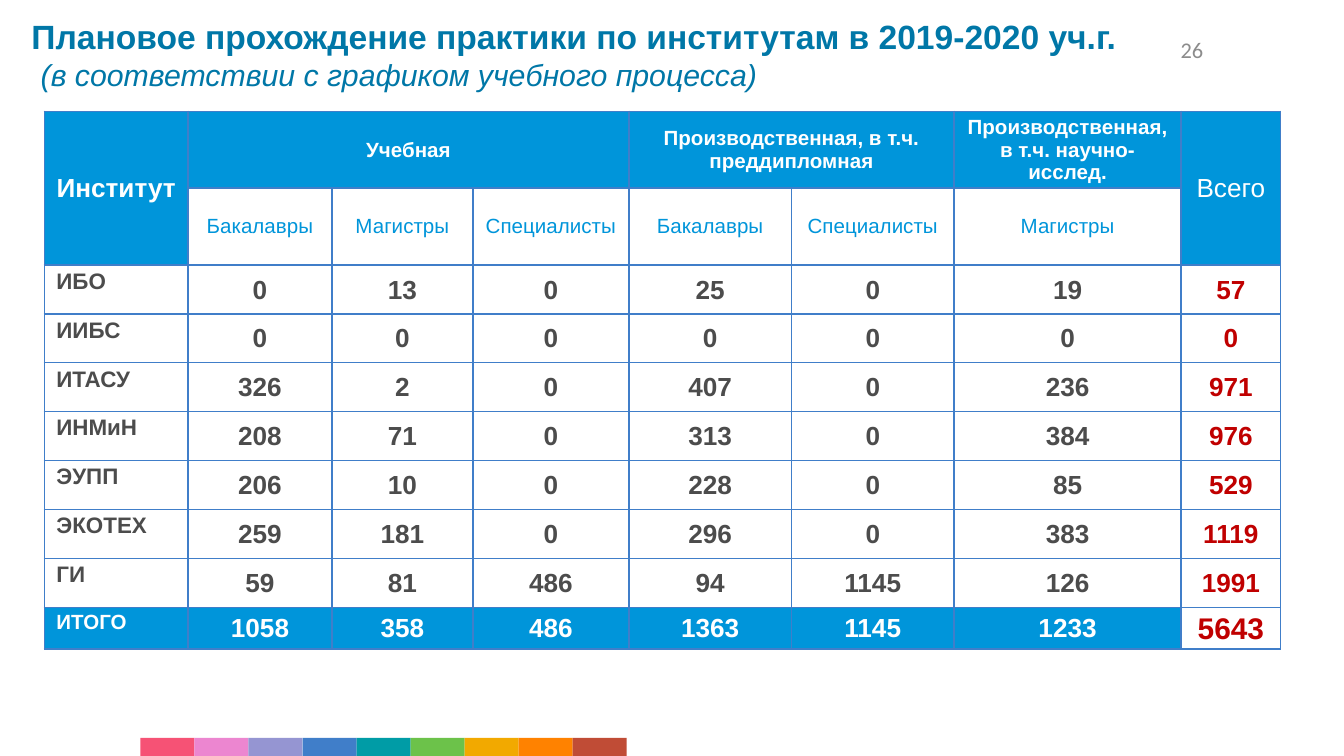
"""Build the slide with planned student practice by institute."""
import pptx
import pptx.util
import pptx.dml.color
import pptx.enum.shapes
import pptx.enum.text
import pptx.oxml.ns
from lxml import etree

RGB = pptx.dml.color.RGBColor
ALIGN = pptx.enum.text.PP_ALIGN
ANCHOR = pptx.enum.text.MSO_ANCHOR
IN = pptx.util.Inches
PT = pptx.util.Pt

WIDTH = 10
HEIGHT = WIDTH * 9 / 16
WHITE = RGB(0xFF, 0xFF, 0xFF)
BLUE = RGB(0x00, 0x95, 0xDA)
TITLE_BLUE = RGB(0x00, 0x77, 0xA7)
BORDER = RGB(0x40, 0x7E, 0xC9)
DARK = RGB(0x4C, 0x4C, 0x4C)
GREY = RGB(0x8C, 0x8C, 0x8C)
RED = RGB(0xC0, 0x00, 0x00)
STRIP = [
    RGB(0xF6, 0x52, 0x75), RGB(0xEC, 0x86, 0xD0), RGB(0x95, 0x95, 0xD2),
    BORDER, RGB(0x00, 0x9C, 0xA6), RGB(0x6C, 0xC2, 0x4A),
    RGB(0xF2, 0xA9, 0x00), RGB(0xFF, 0x82, 0x00), RGB(0xC0, 0x4C, 0x36),
]

COLS = [1.07, 1.07, 1.05, 1.16, 1.21, 1.21, 1.69, 0.74]
ROWS = [0.52, 0.57] + [2.55 / 7] * 7 + [0.31]
GROUPS = [
    (0, 0, 1, 0, "Институт", 14, True),
    (0, 1, 0, 3, "Учебная", 11, True),
    (0, 4, 0, 5, "Производственная, в т.ч. преддипломная", 11, True),
    (0, 6, 0, 6, "Производственная, в т.ч. научно-исслед.", 11, True),
    (0, 7, 1, 7, "Всего", 14, False),
]
LEVELS = ["Бакалавры", "Магистры", "Специалисты", "Бакалавры", "Специалисты", "Магистры"]
DATA = [
    ("ИБО", 0, 13, 0, 25, 0, 19, 57),
    ("ИИБС", 0, 0, 0, 0, 0, 0, 0),
    ("ИТАСУ", 326, 2, 0, 407, 0, 236, 971),
    ("ИНМиН", 208, 71, 0, 313, 0, 384, 976),
    ("ЭУПП", 206, 10, 0, 228, 0, 85, 529),
    ("ЭКОТЕХ", 259, 181, 0, 296, 0, 383, 1119),
    ("ГИ", 59, 81, 486, 94, 1145, 126, 1991),
    ("ИТОГО", 1058, 358, 486, 1363, 1145, 1233, 5643),
]


def box(x, y, w, h):
    """Turn percentages of the slide's size into left, top, width and height."""
    return (IN(x * WIDTH / 100), IN(y * HEIGHT / 100),
            IN(w * WIDTH / 100), IN(h * HEIGHT / 100))


def add_run(p, text, size=14, color=DARK, bold=False, italic=False, font="Arial"):
    """Append formatted text to a paragraph."""
    r = p.add_run()
    r.text = text
    r.font.name, r.font.size = font, PT(size)
    r.font.bold, r.font.italic = bold, italic
    r.font.color.rgb = color


def clear_margins(tf):
    """Fix the size of a text frame and remove its insets."""
    tf.word_wrap = True
    tf.auto_size = pptx.enum.text.MSO_AUTO_SIZE.NONE
    tf.vertical_anchor = ANCHOR.TOP
    tf.margin_left = tf.margin_right = tf.margin_top = tf.margin_bottom = 0


def add_title(s):
    """Fill the title placeholder with a heading and a subtitle line."""
    sp = s.shapes.title
    sp.left, sp.top, sp.width, sp.height = box(2.34, 2.6, 92.8, 8.9)
    clear_margins(sp.text_frame)
    p = sp.text_frame.paragraphs[0]
    p.alignment = ALIGN.LEFT
    p.line_spacing = PT(19.6)
    add_run(p, "Плановое прохождение практики по институтам в 2019-2020 уч.г.",
            size=18, color=TITLE_BLUE, bold=True)
    p.add_line_break()
    add_run(p, " ", size=18, color=TITLE_BLUE, bold=True)
    add_run(p, "(в соответствии с графиком учебного процесса)",
            size=16.2, color=TITLE_BLUE, italic=True)


def add_page_number(s):
    """Place the slide number at the top right."""
    tf = s.shapes.add_textbox(*box(82.8, 4.8, 6.74, 4.8)).text_frame
    clear_margins(tf)
    p = tf.paragraphs[0]
    p.alignment = ALIGN.RIGHT
    add_run(p, "26", size=12, color=GREY, font="Calibri")


def add_strip(s):
    """Draw the row of coloured blocks along the bottom edge."""
    step = 4.02
    for i, color in enumerate(STRIP):
        sp = s.shapes.add_shape(pptx.enum.shapes.MSO_SHAPE.RECTANGLE,
                                *box(10.45 + i * step, 97.6, step, 2.4))
        sp.shadow.inherit = False
        sp.fill.solid()
        sp.fill.fore_color.rgb = color
        sp.line.fill.background()


def style_cell(cell, fill):
    """Give a cell its fill and thin borders."""
    tc_pr = cell._tc.get_or_add_tcPr()
    qn = pptx.oxml.ns.qn
    for side in ("a:lnL", "a:lnR", "a:lnT", "a:lnB"):
        ln = etree.SubElement(tc_pr, qn(side), w=str(PT(1)))
        solid = etree.SubElement(ln, qn("a:solidFill"))
        etree.SubElement(solid, qn("a:srgbClr"), val=str(BORDER))
    cell.fill.solid()
    cell.fill.fore_color.rgb = fill


def write_cell(cell, text, align=ALIGN.CENTER, anchor=ANCHOR.MIDDLE,
               insets=(0.09, 0.03, 0.03), **fmt):
    """Write formatted text into a cell."""
    side, top, bottom = insets
    cell.margin_left = cell.margin_right = IN(side)
    cell.margin_top, cell.margin_bottom = IN(top), IN(bottom)
    cell.vertical_anchor = anchor
    p = cell.text_frame.paragraphs[0]
    p.alignment = align
    add_run(p, text, **fmt)


def write_data_row(table, row, values):
    """Write an institute's name, its counts and their total."""
    is_total = row == len(ROWS) - 1
    color = WHITE if is_total else DARK
    write_cell(table.cell(row, 0), values[0], align=ALIGN.LEFT, anchor=ANCHOR.TOP,
               size=11 if is_total else 12, color=color, bold=True)
    for col, value in enumerate(values[1:], 1):
        last = col == len(COLS) - 1
        write_cell(table.cell(row, col), str(value), insets=(0.01, 0.01, 0),
                   size=16 if last and is_total else 14,
                   color=RED if last else color, bold=True)


def add_practice_table(s):
    """Build the table of practice places by institute."""
    frame = s.shapes.add_table(len(ROWS), len(COLS), IN(0.33), IN(0.83),
                               IN(sum(COLS)), IN(sum(ROWS)))
    table = frame.table
    table.first_row = table.horz_banding = False
    for column, width in zip(table.columns, COLS):
        column.width = IN(width)
    for row, height in zip(table.rows, ROWS):
        row.height = IN(height)
    last_row, last_col = len(ROWS) - 1, len(COLS) - 1
    for r in range(len(ROWS)):
        for c in range(len(COLS)):
            header = r == 0 or (r == 1 and c in (0, last_col))
            total = r == last_row and c < last_col
            style_cell(table.cell(r, c), BLUE if header or total else WHITE)
    for top, left, bottom, right, text, size, bold in GROUPS:
        cell = table.cell(top, left)
        if (top, left) != (bottom, right):
            cell.merge(table.cell(bottom, right))
        write_cell(cell, text, size=size, color=WHITE, bold=bold)
    for col, text in enumerate(LEVELS, 1):
        write_cell(table.cell(1, col), text, size=11, color=BLUE)
    for row, values in enumerate(DATA, 2):
        write_data_row(table, row, values)


def main():
    """Create the presentation and save it."""
    prs = pptx.Presentation()
    prs.slide_width, prs.slide_height = IN(WIDTH), IN(HEIGHT)
    s = prs.slides.add_slide(prs.slide_layouts[5])
    add_strip(s)
    add_title(s)
    add_practice_table(s)
    add_page_number(s)
    prs.save("out.pptx")


if __name__ == "__main__":
    main()
